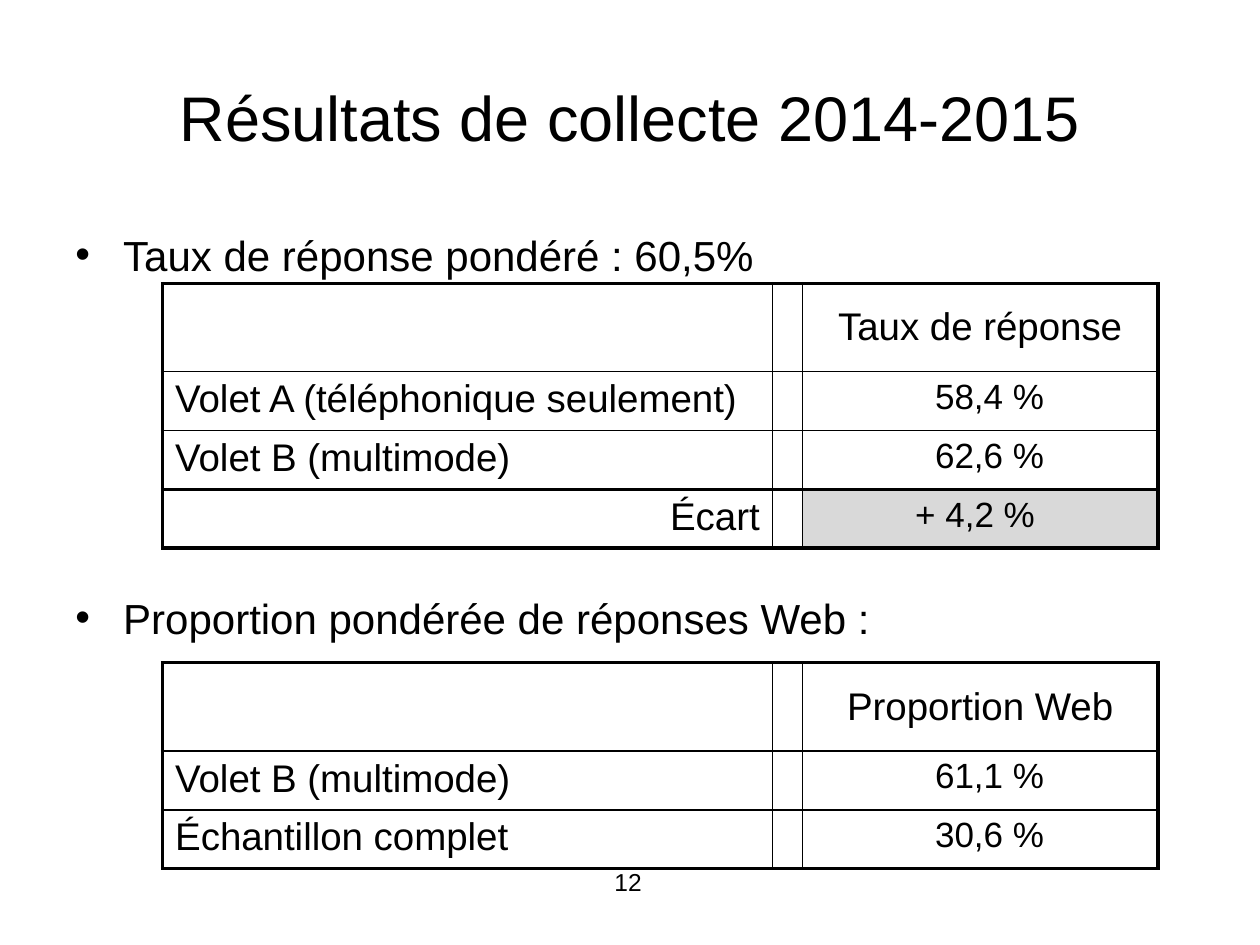
from lxml import etree
from pptx import Presentation
from pptx import util as u
from pptx.dml.color import RGBColor
from pptx.enum import text as tx
from pptx.oxml.ns import qn

In = u.Inches
LEFT, MID, RIGHT = tx.PP_ALIGN.LEFT, tx.PP_ALIGN.CENTER, tx.PP_ALIGN.RIGHT
COLS = (4.84, 0.23, 2.82)
HEAD, ROW = 0.7, 0.43


def ink(code):
    return RGBColor.from_string(code)


def write(frame, words, size=22, align=LEFT, bullet=False, anchor=tx.MSO_ANCHOR.TOP):
    frame.word_wrap = True
    frame.vertical_anchor = anchor
    para = frame.paragraphs[0]
    para.text = words
    para.alignment = align
    if bullet:
        props = para._p.get_or_add_pPr()
        props.set("marL", str(In(0.38)))
        props.set("indent", str(-In(0.38)))
        etree.SubElement(props, qn("a:buFont"), typeface="Arial")
        etree.SubElement(props, qn("a:buChar"), char="•")
    font = para.font
    font.name, font.size = "Arial", u.Pt(size)
    font.color.rgb = ink("000000")


def label(slide, box, words, **form):
    write(slide.shapes.add_textbox(*map(In, box)).text_frame, words, **form)


def edge(cell, **widths):
    props = cell._tc.get_or_add_tcPr()
    for spot, side in enumerate("LRTB"):
        line = etree.Element(qn(f"a:ln{side}"), w=str(u.Pt(widths[side])))
        fill = etree.SubElement(line, qn("a:solidFill"))
        etree.SubElement(fill, qn("a:srgbClr"), val="000000")
        props.insert(spot, line)


def grid(slide, left, top, title, rows, gap=None):
    body = [("", title)] + rows + ([("Écart", gap)] if gap else [])
    count = len(body)
    heavy = {0, count} | ({count - 1} if gap else set())
    high = HEAD + ROW * (count - 1)
    frame = slide.shapes.add_table(count, 3, In(left), In(top), In(sum(COLS)), In(high))
    table = frame.table
    table.first_row = table.horz_banding = False
    for col, wide in zip(table.columns, COLS):
        col.width = In(wide)
    for r, (name, value) in enumerate(body):
        table.rows[r].height = In(ROW if r else HEAD)
        last = gap is not None and r == count - 1
        for c, words in enumerate((name, "", value)):
            cell = table.cell(r, c)
            cell.fill.solid()
            cell.fill.fore_color.rgb = ink("D9D9D9" if last and c == 2 else "FFFFFF")
            edge(cell, L=1 if c else 2.25, R=2.25 if c == 2 else 1,
                 T=2.25 if r in heavy else 1, B=2.25 if r + 1 in heavy else 1)
            if not words:
                continue
            align = MID if c == 2 else RIGHT if last else LEFT
            write(cell.text_frame, words, size=20 if r and c == 2 else 22, align=align)
            if r == 0:
                cell.vertical_anchor = tx.MSO_ANCHOR.MIDDLE
            elif last:
                cell.margin_right = In(0.18 if c == 2 else 0.1)
            elif c == 2:
                cell.margin_left = In(0.25)


def part(slide, left, top, words, drop, **data):
    label(slide, (left, top, 9, 0.5), words, size=24, bullet=True)
    grid(slide, left + 0.79, top + drop, **data)


def main():
    deck = Presentation()
    deck.slide_width, deck.slide_height = In(10), In(7.5)
    slide = deck.slides.add_slide(deck.slide_layouts[6])
    label(slide, (0.5, 0.3, 9, 1.25), "Résultats de collecte 2014-2015",
          size=36, align=MID, anchor=tx.MSO_ANCHOR.MIDDLE)
    part(slide, 0.5, 1.77, "Taux de réponse pondéré : 60,5%", 0.48,
         title="Taux de réponse", gap="+ 4,2 %",
         rows=[("Volet A (téléphonique seulement)", "58,4 %"),
               ("Volet B (multimode)", "62,6 %")])
    part(slide, 0.5, 4.65, "Proportion pondérée de réponses Web :", 0.61,
         title="Proportion Web",
         rows=[("Volet B (multimode)", "61,1 %"),
               ("Échantillon complet", "30,6 %")])
    label(slide, (3.82, 6.83, 2.33, 0.52), "12", size=14, align=MID)
    deck.save("out.pptx")


if __name__ == "__main__":
    main()
